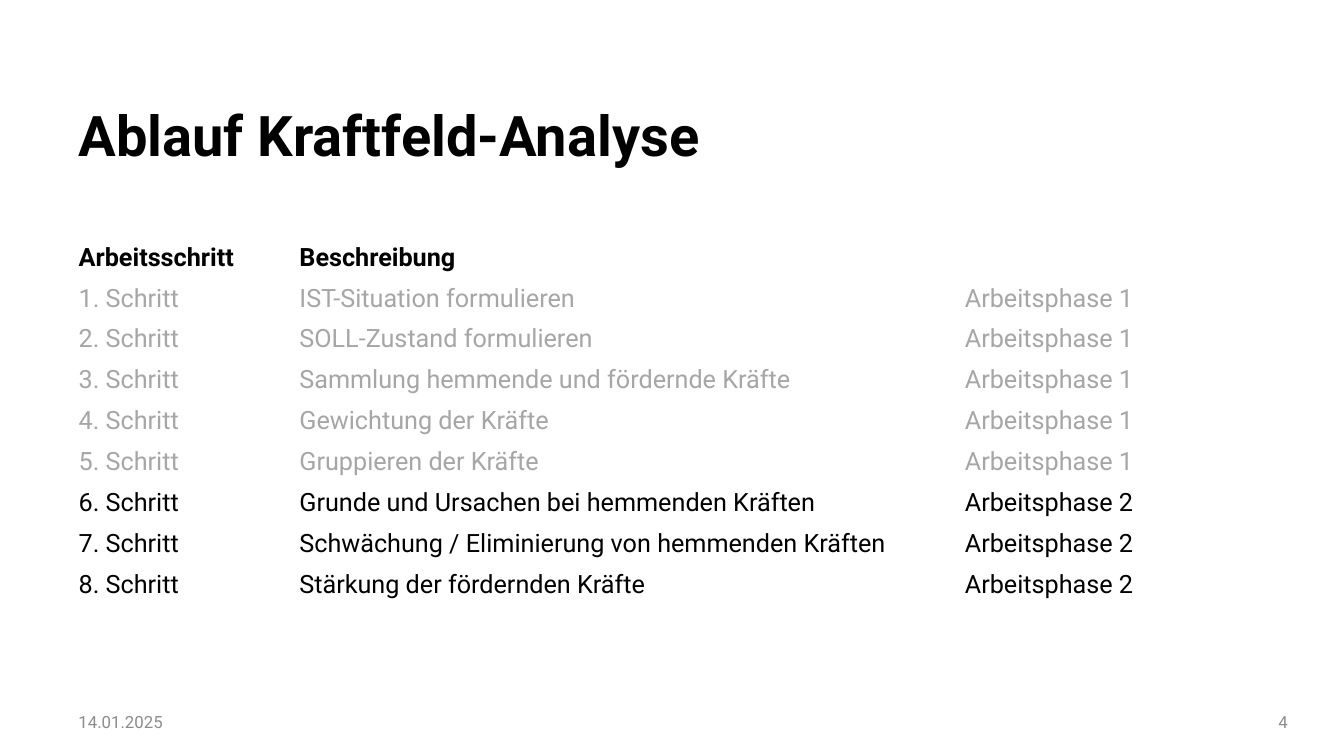
from pptx import Presentation
from pptx.dml.color import RGBColor
from pptx.enum.text import MSO_ANCHOR, PP_ALIGN
from pptx.util import Pt

PX = 9144  # EMU per px, 100 px to the inch
FONT = "Roboto"
COLORS = {"ink": "000000", "done": "A6A6A6", "foot": "8C8C8C"}


class Board:
    def __init__(self, slide):
        self.slide = slide

    def style(self, para, size, color, bold=False):
        font = para.font
        font.name, font.size, font.bold = FONT, Pt(size), bold
        font.color.rgb = RGBColor.from_string(COLORS[color])

    def text(self, box, words, size, color, bold=False,
             align=PP_ALIGN.LEFT, anchor=MSO_ANCHOR.TOP, line=1.0):
        frame = self.slide.shapes.add_textbox(*(n * PX for n in box)).text_frame
        frame.word_wrap = True
        frame.vertical_anchor = anchor
        para = frame.paragraphs[0]
        para.text, para.alignment, para.line_spacing = words, align, line
        self.style(para, size, color, bold)

    def table(self, box, widths, rows, size):
        place = (n * PX for n in box)
        table = self.slide.shapes.add_table(len(rows), len(widths), *place).table
        table.first_row = table.horz_banding = False
        for col, width in zip(table.columns, widths):
            col.width = width * PX
        for row, (words, color, bold) in zip(table.rows, rows):
            for cell, word in zip(row.cells, words):
                cell.fill.background()
                cell.text = word
                self.style(cell.text_frame.paragraphs[0], size, color, bold)


STEPS = [
    "IST-Situation formulieren",
    "SOLL-Zustand formulieren",
    "Sammlung hemmende und fördernde Kräfte",
    "Gewichtung der Kräfte",
    "Gruppieren der Kräfte",
    "Grunde und Ursachen bei hemmenden Kräften",
    "Schwächung / Eliminierung von hemmenden Kräften",
    "Stärkung der fördernden Kräfte",
]
FIRST = 5  # number of steps in phase 1


def main():
    deck = Presentation()
    deck.slide_width, deck.slide_height = 1333 * PX, 750 * PX
    board = Board(deck.slides.add_slide(deck.slide_layouts[6]))

    # Title
    board.text((68, 102, 1220, 79), "Ablauf Kraftfeld-Analyse", 40, "ink",
               bold=True, line=0.9)

    # Steps: phase 1 is greyed out, phase 2 is current
    rows = [(("Arbeitsschritt", "Beschreibung", ""), "ink", True)]
    for num, step in enumerate(STEPS, 1):
        phase, color = (1, "done") if num <= FIRST else (2, "ink")
        words = (f"{num}. Schritt", step, f"Arbeitsphase {phase}")
        rows.append((words, color, False))
    board.table((68, 236, 1153, 365), (219, 660, 274), rows, 18)

    # Footer: date and slide number
    for left, words, align in ((68, "14.01.2025", PP_ALIGN.LEFT),
                               (1130, "4", PP_ALIGN.RIGHT)):
        board.text((left, 697, 157, 39), words, 12, "foot",
                   align=align, anchor=MSO_ANCHOR.MIDDLE)

    deck.save("out.pptx")


if __name__ == "__main__":
    main()
